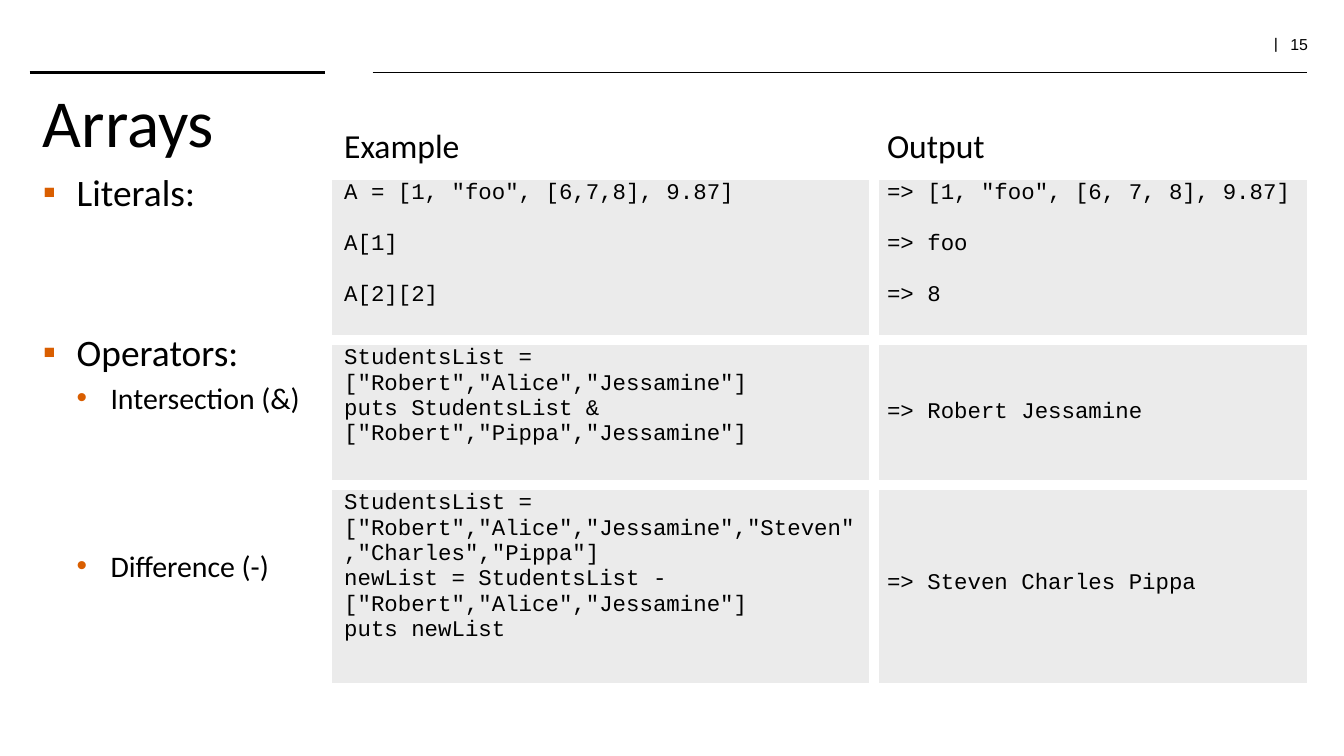
from lxml import etree
from pptx import Presentation
from pptx import util as u
from pptx.dml.color import RGBColor
from pptx.enum import shapes, text
from pptx.oxml import ns

INK = {"black": "000000", "white": "FFFFFF", "grey": "EBEBEB", "rust": "D95E00"}
SANS, MONO = "Calibri", "Courier New"


def hue(name):
    return RGBColor.from_string(INK[name])


def add(node, tag, **attrs):
    return etree.SubElement(node, ns.qn(tag), **attrs)


class Deck:
    """Holds the style and the current slide, and draws each kind of element."""

    def __init__(self, wide, high):
        self.prs = Presentation()
        self.prs.slide_width, self.prs.slide_height = u.Cm(wide), u.Cm(high)
        self.slide = self.prs.slides.add_slide(self.prs.slide_layouts[6])

    def run(self, para, words, size, face=SANS):
        run = para.add_run()
        run.text = words
        font = run.font
        font.size, font.name = u.Pt(size), face
        font.color.rgb = hue("black")

    def box(self, *place):
        frame = self.slide.shapes.add_textbox(*map(u.Cm, place)).text_frame
        frame.word_wrap = True
        return frame

    def rule(self, left, right, top, width):
        line = self.slide.shapes.add_connector(
            shapes.MSO_CONNECTOR.STRAIGHT, u.Cm(left), u.Cm(top), u.Cm(right), u.Cm(top))
        line.line.color.rgb, line.line.width = hue("black"), u.Pt(width)
        add(line._element.spPr, "a:effectLst")

    def page(self, place, mark, number):
        para = self.box(*place).paragraphs[0]
        para.alignment, para.line_spacing = text.PP_ALIGN.RIGHT, 0.8
        self.run(para, mark, 9, "TeX Gyre Schola")
        self.run(para, number, 8.5, "Arial")

    def title(self, place, words):
        self.run(self.box(*place).paragraphs[0], words, 36)

    def list(self, place, items):
        frame = self.box(*place)
        for i, (level, words, gap) in enumerate(items):
            para = frame.add_paragraph() if i else frame.paragraphs[0]
            para.level = level
            props = para._p.get_or_add_pPr()
            step = u.Cm(0.64)
            props.set("marL", str(step * (level + 1)))
            props.set("indent", str(-step))
            para.space_before = u.Pt(gap)
            add(add(props, "a:buClr"), "a:srgbClr", val=INK["rust"])
            add(props, "a:buFont", typeface="Arial")
            add(props, "a:buChar", char="▪•"[level])
            self.run(para, words, (20, 16)[level])

    def edge(self, cell, sides):
        props = cell._tc.get_or_add_tcPr()
        for i, side in enumerate(sides):
            line = etree.Element(ns.qn("a:ln" + side), w=str(u.Pt(6)))
            add(add(line, "a:solidFill"), "a:srgbClr", val=INK["white"])
            props.insert(i, line)

    def cell(self, cell, lines, size, face, gap):
        for i, words in enumerate(lines):
            para = cell.text_frame.add_paragraph() if i else cell.text_frame.paragraphs[0]
            para.space_before = u.Pt(gap if i else 0)
            self.run(para, words, size, face)

    def table(self, left, top, cols, rows, head, body):
        grid = self.slide.shapes.add_table(
            len(rows), len(cols), u.Cm(left), u.Cm(top), u.Cm(sum(cols)), u.Cm(sum(rows))).table
        grid.first_row = grid.horz_banding = False
        for col, wide in zip(grid.columns, cols):
            col.width = u.Cm(wide)
        for row, high in zip(grid.rows, rows):
            row.height = u.Cm(high)
        for c, words in enumerate(head):
            cell = grid.cell(0, c)
            cell.fill.background()
            self.edge(cell, "B")
            self.cell(cell, [words], 18, SANS, 0)
        for r, (gap, *pair) in enumerate(body, 1):
            for c, lines in enumerate(pair):
                cell = grid.cell(r, c)
                cell.fill.solid()
                cell.fill.fore_color.rgb = hue("grey")
                self.edge(cell, "RL"[c] + "T" + ("B" if r < len(body) else ""))
                if c and len(lines) == 1:
                    cell.vertical_anchor = text.MSO_ANCHOR.MIDDLE
                self.cell(cell, lines, 12, MONO, gap)


def main():
    deck = Deck(25.4, 14.29)
    deck.page((22.38, 0.58, 2.59, 0.56), "|  ", "15")
    deck.rule(0.56, 6.15, 1.37, 2)
    deck.rule(7.04, 24.71, 1.37, 1)
    deck.title((0.56, 1.4, 24.16, 1.45), "Arrays")
    deck.list((0.56, 3.07, 10.87, 9.32), [
        (0, "Literals:", 0),
        (0, "Operators:", 62),
        (1, "Intersection (&)", 3),
        (1, "Difference (-)", 70.5),
    ])
    deck.table(6.25, 2.26, (10.26, 8.2), (1.04, 3.12, 2.74, 3.76), ("Example", "Output"), [
        (13.6, ['A = [1, "foo", [6,7,8], 9.87]', "A[1]", "A[2][2]"],
         ['=> [1, "foo", [6, 7, 8], 9.87]', "=> foo", "=> 8"]),
        (0, ['StudentsList = ["Robert","Alice","Jessamine"]',
             'puts StudentsList & ["Robert","Pippa","Jessamine"]'],
         ["=> Robert Jessamine"]),
        (0, ['StudentsList = ["Robert","Alice","Jessamine","Steven","Charles","Pippa"]',
             'newList = StudentsList - ["Robert","Alice","Jessamine"]',
             "puts newList"],
         ["=> Steven Charles Pippa"]),
    ])
    deck.prs.save("out.pptx")


if __name__ == "__main__":
    main()
